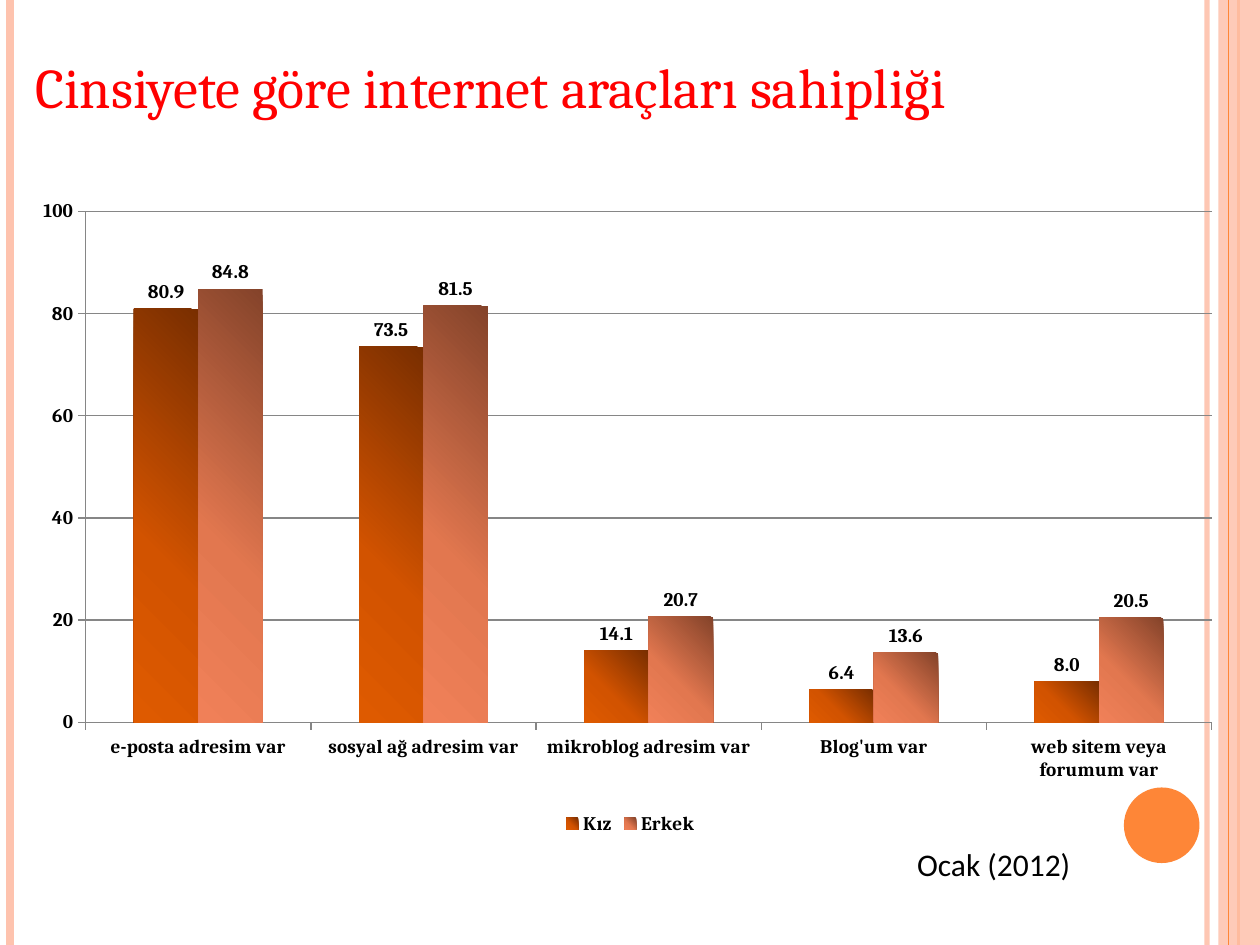
from lxml import etree
from pptx import Presentation
from pptx.chart.data import CategoryChartData
from pptx.dml.color import RGBColor
from pptx.enum.chart import XL_CHART_TYPE, XL_LABEL_POSITION, XL_LEGEND_POSITION, XL_TICK_MARK
from pptx.enum.shapes import MSO_CONNECTOR, MSO_SHAPE
from pptx.enum.text import MSO_ANCHOR, PP_ALIGN
from pptx.oxml import parse_xml
from pptx.oxml.ns import nsdecls, qn
from pptx.util import Inches, Pt

COLORS = {
    "peach": "FEC3AE", "orange": "FE8637", "title": "FF0000", "text": "000000",
    "grid": "868686", "girl_light": "DE5A00", "girl_mid": "D25300", "girl_dark": "792E00",
    "boy_light": "F08058", "boy_mid": "E2774F", "boy_dark": "84432A",
}
STRIPES = [(9.58, "peach", 3, 93), (0.08, "peach", 4.5, 100), (9.83, "orange", 1.5, 100)]
CATEGORIES = ["e-posta adresim var", "sosyal ağ adresim var", "mikroblog adresim var",
              "Blog'um var", "web sitem veya forumum var"]
SERIES = {"Kız": ("girl", [80.9, 73.5, 14.1, 6.4, 8.0]),
          "Erkek": ("boy", [84.8, 81.5, 20.7, 13.6, 20.5])}


def color(key):
    """Return the named palette colour."""
    return RGBColor.from_string(COLORS[key])


def set_alpha(element, percent):
    """Make the solid colour inside an element partly transparent."""
    rgb = element.find(".//" + qn("a:srgbClr"))
    etree.SubElement(rgb, qn("a:alpha")).set("val", str(percent * 1000))


def add_stripe(slide, x, key, width, alpha=100):
    """Draw a full-height vertical stripe."""
    stripe = slide.shapes.add_connector(
        MSO_CONNECTOR.STRAIGHT, Inches(x), 0, Inches(x), Inches(7.5))
    stripe.line.color.rgb = color(key)
    stripe.line.width = Pt(width)
    properties = stripe._element.spPr
    etree.SubElement(properties, qn("a:effectLst"))
    if alpha < 100:
        set_alpha(properties, alpha)


def add_plain_shape(slide, kind, box, key):
    """Draw a borderless filled shape in a box."""
    plain = slide.shapes.add_shape(kind, *map(Inches, box))
    plain.shadow.inherit = False
    plain.fill.solid()
    plain.fill.fore_color.rgb = color(key)
    plain.line.fill.background()
    return plain


def add_frame(slide):
    """Draw the decorative edges and the badge."""
    for stripe in STRIPES:
        add_stripe(slide, *stripe)
    band = add_plain_shape(slide, MSO_SHAPE.RECTANGLE, (9.67, 0, 0.33, 7.5), "peach")
    set_alpha(band._element.spPr, 87)
    add_stripe(slide, 9.75, "orange", 0.75)
    add_plain_shape(slide, MSO_SHAPE.OVAL, (8.92, 6.25, 0.6, 0.6), "orange")


def style_text(frame, font, size, key):
    """Format the single run of a text frame."""
    run_font = frame.paragraphs[0].runs[0].font
    run_font.name = font
    run_font.size = Pt(size)
    run_font.color.rgb = color(key)


def add_title(slide, box):
    """Place the heading in the title placeholder."""
    title = slide.shapes.title
    title.left, title.top, title.width, title.height = map(Inches, box)
    frame = title.text_frame
    frame.text = "Cinsiyete göre internet araçları sahipliği"
    frame.vertical_anchor = MSO_ANCHOR.MIDDLE
    frame.paragraphs[0].alignment = PP_ALIGN.LEFT
    style_text(frame, "Cambria", 32, "title")


def set_glow(series, tone):
    """Fill a series with a radial gradient from the lower left corner."""
    stops = "".join(
        f'<a:gs pos="{position}"><a:srgbClr val="{COLORS[f"{tone}_{shade}"]}"/></a:gs>'
        for position, shade in [(0, "light"), (40000, "mid"), (100000, "dark")])
    gradient = parse_xml(
        f'<a:gradFill {nsdecls("a")} rotWithShape="1"><a:gsLst>{stops}</a:gsLst>'
        '<a:path path="circle"><a:fillToRect t="100000" r="100000"/></a:path></a:gradFill>')
    series.format.fill.background()
    properties = series._element.find(qn("c:spPr"))
    properties.replace(properties.find(qn("a:noFill")), gradient)


def set_plot_layout(chart, x, y, w, h):
    """Fix the inner plot area as fractions of the chart."""
    parts = "".join(f'<c:{tag} val="{value}"/>' for tag, value in [
        ("layoutTarget", "inner"), ("xMode", "edge"), ("yMode", "edge"),
        ("x", x), ("y", y), ("w", w), ("h", h)])
    layout = parse_xml(
        f'<c:layout {nsdecls("c")}><c:manualLayout>{parts}</c:manualLayout></c:layout>')
    area = chart._chartSpace.chart.plotArea
    for old in area.findall(qn("c:layout")):
        area.remove(old)
    area.insert(0, layout)


def add_ownership_chart(slide, box):
    """Add the clustered columns by gender."""
    data = CategoryChartData(number_format="#,##0.0")
    data.categories = CATEGORIES
    for name, (_, values) in SERIES.items():
        data.add_series(name, values)
    chart = slide.shapes.add_chart(
        XL_CHART_TYPE.COLUMN_CLUSTERED, *map(Inches, box), data).chart
    chart.has_title = False
    chart.font.name = "Cambria"
    chart.font.size = Pt(11)
    chart.font.bold = True
    chart.font.color.rgb = color("text")
    chart.has_legend = True
    chart.legend.position = XL_LEGEND_POSITION.BOTTOM
    chart.legend.include_in_layout = False
    set_plot_layout(chart, 0.05, 0.04, 0.93, 0.78)

    plot = chart.plots[0]
    plot.gap_width = 150
    plot.overlap = 0
    plot.vary_by_categories = False
    for series, (tone, _) in zip(plot.series, SERIES.values()):
        set_glow(series, tone)
        series.invert_if_negative = False
        labels = series.data_labels
        labels.show_value = True
        labels.number_format = "#,##0.0"
        labels.number_format_is_linked = False
        labels.position = XL_LABEL_POSITION.OUTSIDE_END

    scale = chart.value_axis
    scale.minimum_scale, scale.maximum_scale, scale.major_unit = 0, 100, 20
    scale.tick_labels.number_format = "#,##0"
    scale.tick_labels.number_format_is_linked = False
    scale.major_gridlines.format.line.color.rgb = color("grid")
    scale.major_gridlines.format.line.width = Pt(0.75)
    for axis, mark in [(scale, XL_TICK_MARK.OUTSIDE), (chart.category_axis, XL_TICK_MARK.OUTSIDE)]:
        axis.major_tick_mark = mark
        axis.format.line.color.rgb = color("grid")


def add_citation(slide, box):
    """Write the reference below the chart."""
    frame = slide.shapes.add_textbox(*map(Inches, box)).text_frame
    frame.word_wrap = True
    frame.text = "Ocak (2012)"
    style_text(frame, "Calibri", 18, "text")


def main():
    """Build and save the slide."""
    presentation = Presentation()
    presentation.slide_width, presentation.slide_height = Inches(10), Inches(7.5)
    slide = presentation.slides.add_slide(presentation.slide_layouts[5])
    add_frame(slide)
    add_ownership_chart(slide, (0.2, 1.47, 9.61, 5.2))
    add_title(slide, (0.18, 0.21, 9.45, 0.94))
    add_citation(slide, (7.18, 6.66, 1.42, 0.4))
    presentation.save("out.pptx")


if __name__ == "__main__":
    main()
